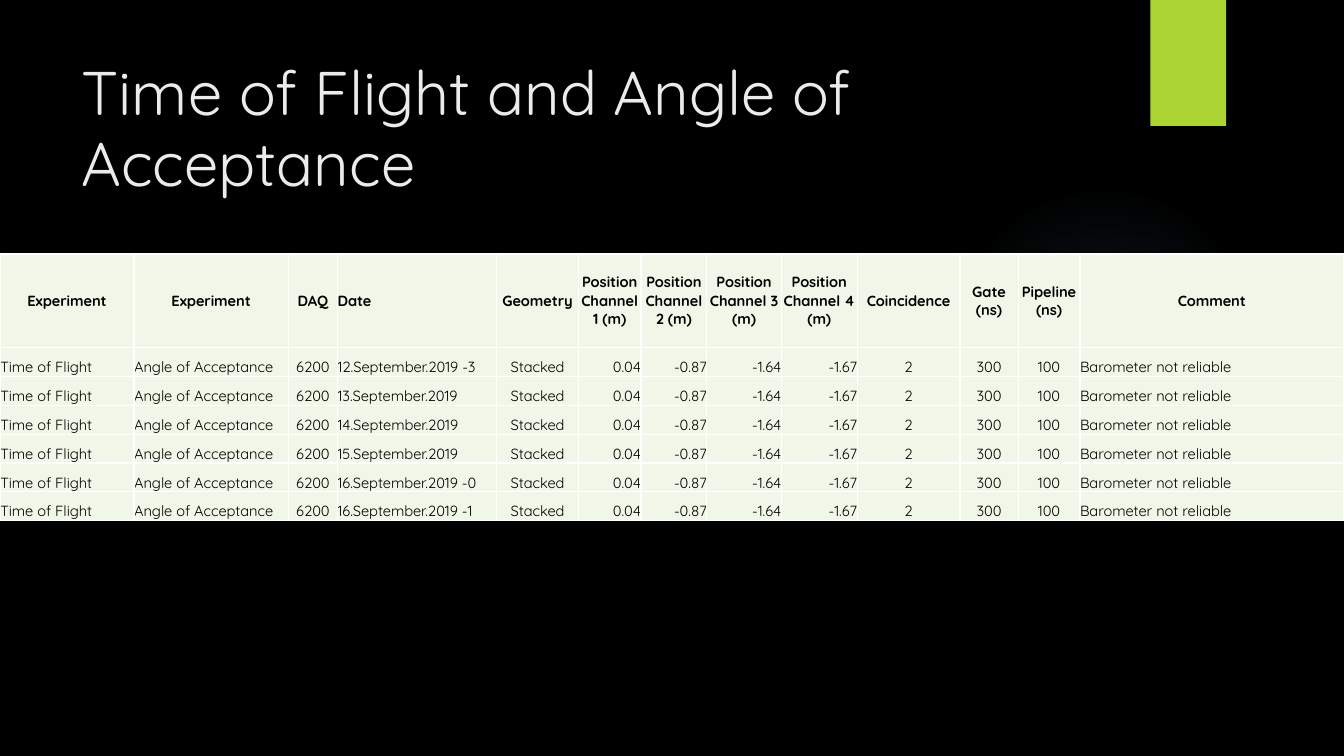
from lxml.etree import SubElement
from pptx import Presentation
from pptx.dml.color import RGBColor
from pptx.enum.shapes import MSO_SHAPE
from pptx.enum.text import MSO_ANCHOR, PP_ALIGN
from pptx.oxml import parse_xml
from pptx.oxml.ns import nsdecls, qn
from pptx.util import Pt

BLACK = RGBColor(0x00, 0x00, 0x00)
WHITE = RGBColor(0xFF, 0xFF, 0xFF)
TITLE_GREY = RGBColor(0xEB, 0xEB, 0xEB)
LIME = RGBColor(0xAC, 0xD4, 0x33)
PALE_GREEN = RGBColor(0xF1, 0xF7, 0xE8)
GLOW_BLUE = RGBColor(0x7A, 0xC4, 0xF0)

LEFT, CENTER, RIGHT = PP_ALIGN.LEFT, PP_ALIGN.CENTER, PP_ALIGN.RIGHT

COLUMNS = [
    ("Experiment", 95.8, CENTER, LEFT, "Time of Flight"),
    ("Experiment", 110.2, CENTER, LEFT, "Angle of Acceptance"),
    ("DAQ", 35.2, CENTER, CENTER, "6200"),
    ("Date", 113.8, LEFT, LEFT, None),
    ("Geometry", 58.2, CENTER, CENTER, "Stacked"),
    ("Position Channel 1 (m)", 44.8, CENTER, RIGHT, "0.04"),
    ("Position Channel 2 (m)", 47, CENTER, RIGHT, "-0.87"),
    ("Position Channel 3 (m)", 53.2, CENTER, RIGHT, "-1.64"),
    ("Position Channel 4 (m)", 54.2, CENTER, RIGHT, "-1.67"),
    ("Coincidence", 73.4, CENTER, CENTER, "2"),
    ("Gate (ns)", 41.6, CENTER, CENTER, "300"),
    ("Pipeline (ns)", 44.2, CENTER, CENTER, "100"),
    ("Comment", 188.4, CENTER, LEFT, "Barometer not reliable"),
]
DATES = [
    "12.September.2019 -3",
    "13.September.2019",
    "14.September.2019",
    "15.September.2019",
    "16.September.2019 -0",
    "16.September.2019 -1",
]
HEADER_HEIGHT = 67
ROW_HEIGHT = 20.6


class SlideBuilder:
    font_name = "Quicksand"
    table_size = 10.5

    def __init__(self, page):
        self.page = page
        page.background.fill.solid()
        page.background.fill.fore_color.rgb = BLACK

    def shape(self, kind, left, top, width, height, color):
        box = self.page.shapes.add_shape(kind, Pt(left), Pt(top), Pt(width), Pt(height))
        box.shadow.inherit = False
        box.line.fill.background()
        box.fill.solid()
        box.fill.fore_color.rgb = color
        return box

    def glow(self, left, top, size, color, stops):
        box = self.shape(MSO_SHAPE.OVAL, left, top, size, size, color)
        marks = "".join(
            f'<a:gs pos="{place * 1000}"><a:srgbClr val="{color}">'
            f'<a:alpha val="{opacity * 1000}"/></a:srgbClr></a:gs>'
            for place, opacity in stops
        )
        gradient = parse_xml(
            f'<a:gradFill {nsdecls("a")}><a:gsLst>{marks}</a:gsLst>'
            '<a:path path="circle"><a:fillToRect l="50000" t="50000" r="50000" b="50000"/>'
            "</a:path></a:gradFill>"
        )
        properties = box.element.spPr
        properties.replace(properties.find(qn("a:solidFill")), gradient)

    def add_text(self, para, text, size, color, align, bold=False):
        para.alignment = align
        span = para.add_run()
        span.text = text
        span.font.name = self.font_name
        span.font.size = Pt(size)
        span.font.bold = bold
        span.font.color.rgb = color

    def title(self, text, left, top, width, height):
        box = self.page.shapes.title
        box.left, box.top, box.width, box.height = Pt(left), Pt(top), Pt(width), Pt(height)
        frame = box.text_frame
        frame.word_wrap = True
        frame.vertical_anchor = MSO_ANCHOR.TOP
        frame.margin_top = Pt(5.2)
        para = frame.paragraphs[0]
        para.line_spacing = 0.97
        self.add_text(para, text, 44, TITLE_GREY, LEFT)
        box.element.getparent().append(box.element)

    def cell(self, cell, text, align, anchor, bold):
        cell.margin_left = cell.margin_right = cell.margin_top = cell.margin_bottom = 0
        cell.vertical_anchor = anchor
        self.add_text(cell.text_frame.paragraphs[0], text, self.table_size, BLACK, align, bold)
        properties = cell._tc.get_or_add_tcPr()
        for side in ("lnL", "lnR", "lnT", "lnB"):
            border = SubElement(properties, qn(f"a:{side}"), w=str(Pt(1)))
            paint = SubElement(border, qn("a:solidFill"))
            SubElement(paint, qn("a:srgbClr"), val=str(WHITE))
        cell.fill.solid()
        cell.fill.fore_color.rgb = PALE_GREEN

    def table(self, left, top, columns, dates):
        width = sum(column[1] for column in columns)
        height = HEADER_HEIGHT + ROW_HEIGHT * len(dates)
        table = self.page.shapes.add_table(
            len(dates) + 1, len(columns), Pt(left), Pt(top), Pt(width), Pt(height)
        ).table
        table.first_row = table.horz_banding = False
        for number, row in enumerate(table.rows):
            row.height = Pt(ROW_HEIGHT if number else HEADER_HEIGHT)
        for index, (heading, width, heading_align, align, value) in enumerate(columns):
            table.columns[index].width = Pt(width)
            self.cell(table.cell(0, index), heading, heading_align, MSO_ANCHOR.MIDDLE, True)
            for number, date in enumerate(dates, 1):
                self.cell(table.cell(number, index), value or date, align, MSO_ANCHOR.BOTTOM, False)


def main():
    deck = Presentation()
    deck.slide_width, deck.slide_height = Pt(960), Pt(540)
    builder = SlideBuilder(deck.slides.add_slide(deck.slide_layouts[5]))
    builder.glow(677.5, 131.8, 221.8, GLOW_BLUE, [(0, 7), (36, 6), (69, 0)])
    builder.shape(MSO_SHAPE.RECTANGLE, 821.8, 0, 54, 90, LIME)
    builder.title("Time of Flight and Angle of Acceptance", 51, 36, 741, 110)
    builder.table(0, 181.4, COLUMNS, DATES)
    deck.save("out.pptx")


if __name__ == "__main__":
    main()
